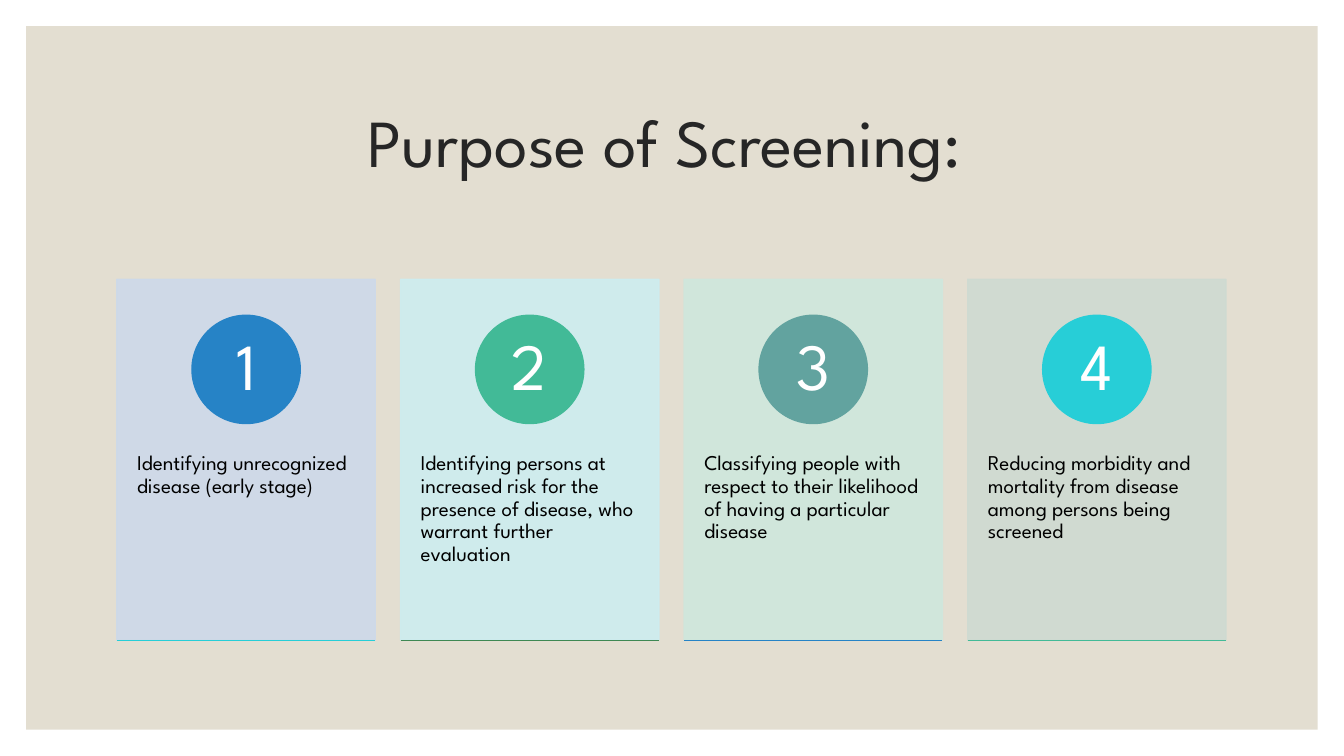
from pptx import Presentation, util as u
from pptx.dml.color import RGBColor
from pptx.enum import shapes, text
from pptx.oxml import parse_xml
from pptx.oxml.ns import qn, nsdecls

WIDE, HIGH = 13.33, 7.5
FONT = "League Spartan"
CARDS = [
    ("Identifying unrecognized disease (early stage)", "CDD9EA", "2683C6", "27CED7"),
    ("Identifying persons at increased risk for the presence of disease, "
     "who warrant further evaluation", "CDEDF0", "42BA97", "3E8853"),
    ("Classifying people with respect to their likelihood of having "
     "a particular disease", "CFE7DD", "62A39F", "2683C6"),
    ("Reducing morbidity and mortality from disease among persons "
     "being screened", "CEDAD1", "27CED7", "42BA97"),
]


def color(code):
    return RGBColor.from_string(code)


def inches(*sizes):
    return [u.Inches(size) for size in sizes]


def write(shape, words, size, code, align=text.PP_ALIGN.LEFT,
          anchor=text.MSO_ANCHOR.TOP, pad=(0.1, 0.05)):
    frame = shape.text_frame
    frame.word_wrap = True
    frame.auto_size = text.MSO_AUTO_SIZE.NONE
    frame.vertical_anchor = anchor
    frame.margin_left = frame.margin_right = u.Inches(pad[0])
    frame.margin_top = frame.margin_bottom = u.Inches(pad[1])
    para = frame.paragraphs[0]
    para.alignment = align
    para.line_spacing = 0.9
    run = para.add_run()
    run.text = words
    run.font.name = FONT
    run.font.size = u.Pt(size)
    run.font.color.rgb = color(code)


def draw(parent, kind, box, code, edge=True, alpha=None):
    shape = parent.add_shape(kind, *inches(*box))
    shape.shadow.inherit = False
    shape.fill.solid()
    shape.fill.fore_color.rgb = color(code)
    if edge:
        shape.line.color.rgb = color(code)
        shape.line.width = u.Pt(1)
    else:
        shape.line.fill.background()
    if alpha:
        for node in shape._element.spPr.iter(qn("a:srgbClr")):
            node.append(parse_xml(f'<a:alpha {nsdecls("a")} val="{alpha * 1000}"/>'))
    return shape


def rule(parent, left, top, width, code):
    line = parent.add_connector(shapes.MSO_CONNECTOR.STRAIGHT,
                                *inches(left, top, left + width, top))
    line.line.color.rgb = color(code)
    line.line.width = u.Pt(0.75)
    line._element.spPr.append(parse_xml(f'<a:effectLst {nsdecls("a")}/>'))


def panel(slide, gap):
    shape = draw(slide.shapes, shapes.MSO_SHAPE.RECTANGLE,
                 (gap, gap, WIDE - 2 * gap, HIGH - 2 * gap), "E3DED1", edge=False)
    slide.shapes.title._element.addprevious(shape._element)


def header(slide, box):
    title = slide.shapes.title
    title.left, title.top, title.width, title.height = inches(*box)
    write(title, "Purpose of Screening: ", 48, "262626",
          text.PP_ALIGN.CENTER, text.MSO_ANCHOR.MIDDLE)


def card(slide, box, number, words, back, disc, base):
    left, top, width, height = box
    group = slide.shapes.add_group_shape().shapes
    draw(group, shapes.MSO_SHAPE.RECTANGLE, box, back, alpha=90)
    body = group.add_textbox(*inches(left, top + 0.38 * height, width, 0.6 * height))
    write(body, words, 15, "000000", pad=(0.2, 0.36))
    size = 0.3 * height
    badge = draw(group, shapes.MSO_SHAPE.OVAL,
                 (left + (width - size) / 2, top + 0.1 * height, size, size), disc)
    write(badge, str(number), 47, "FFFFFF", text.PP_ALIGN.CENTER,
          text.MSO_ANCHOR.MIDDLE, pad=(0.08, 0.01))
    rule(group, left, top + height, width, base)


def deck(slide, box, gap):
    left, top, width, height = box
    wide = (width - gap * (len(CARDS) - 1)) / len(CARDS)
    for index, item in enumerate(CARDS):
        card(slide, (left + index * (wide + gap), top, wide, height), index + 1, *item)


def main():
    show = Presentation()
    show.slide_width, show.slide_height = inches(WIDE, HIGH)
    slide = show.slides.add_slide(show.slide_layouts[5])
    slide.background.fill.solid()
    slide.background.fill.fore_color.rgb = color("FFFFFF")
    panel(slide, 0.26)
    header(slide, (1.17, 0.7, 11, 1.5))
    deck(slide, (1.16, 2.77, 11, 3.58), 0.25)
    show.save("out.pptx")


if __name__ == "__main__":
    main()
